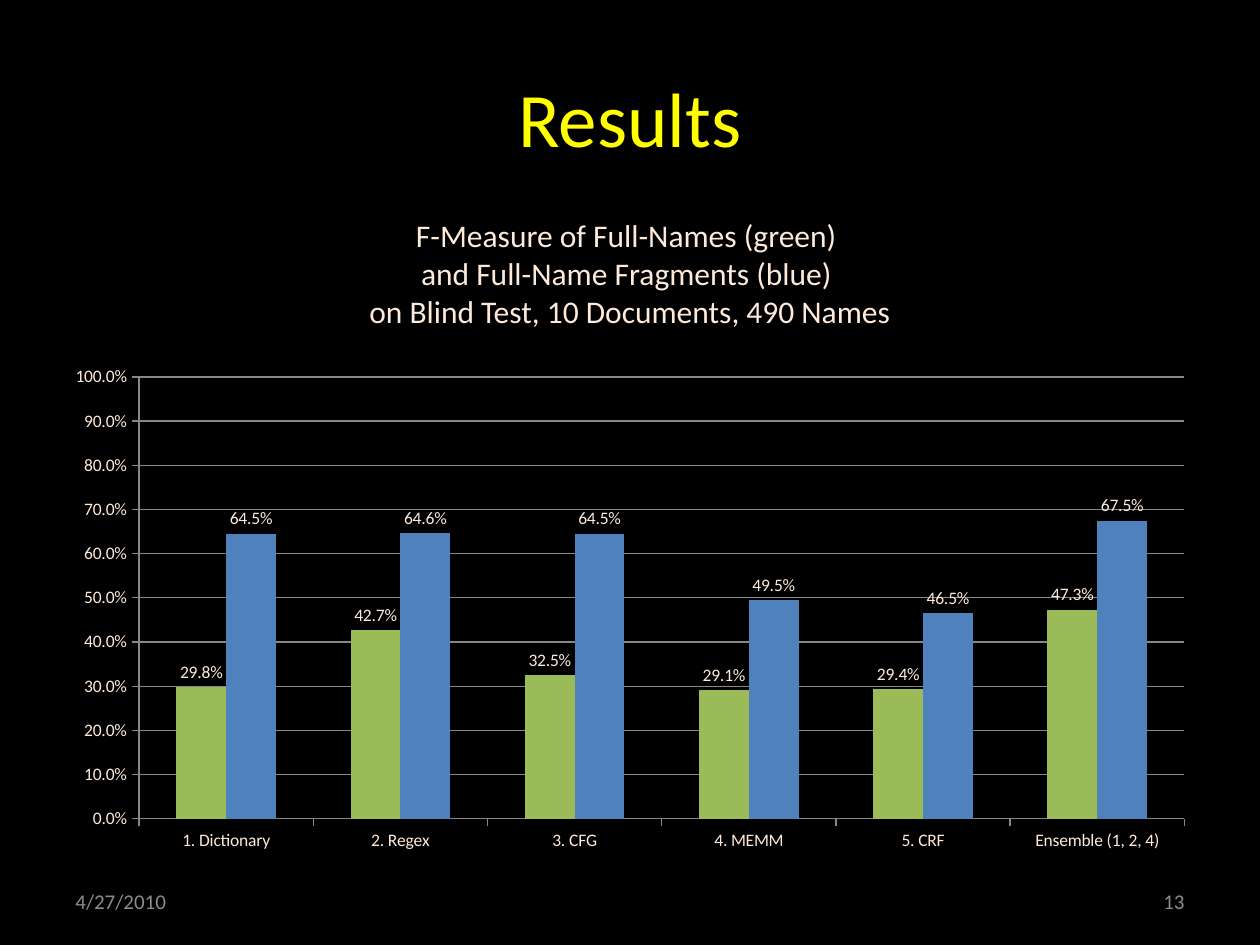
"""Build the results slide: a title, a caption and a clustered column chart."""
from dataclasses import dataclass

from pptx import Presentation
from pptx import util as u
from pptx.chart.data import CategoryChartData
from pptx.dml.color import RGBColor
from pptx.enum import chart as ch
from pptx.enum import text as t


@dataclass(frozen=True)
class Theme:
    font: str = "Calibri"
    back: str = "000000"
    head: str = "FFFF00"
    body: str = "FDEADA"
    mute: str = "8C8C8C"
    line: str = "878787"
    bars: tuple = ("9BBB59", "4F81BD")
    big: int = 44
    mid: int = 18
    small: int = 12
    tiny: int = 10


class Deck:
    cols, rows = 120, 90

    def __init__(self, theme):
        self.theme = theme
        self.prs = Presentation()
        self.prs.slide_width, self.prs.slide_height = u.Inches(10), u.Inches(7.5)
        self.slide = self.prs.slides.add_slide(self.prs.slide_layouts[5])
        self.paint(self.slide.background.fill, theme.back)

    def paint(self, fill, color):
        fill.solid()
        fill.fore_color.rgb = RGBColor.from_string(color)

    def box(self, x, y, w, h):
        dx = self.prs.slide_width / self.cols
        dy = self.prs.slide_height / self.rows
        return [round(n) for n in (x * dx, y * dy, w * dx, h * dy)]

    def style(self, font, size, color):
        font.name, font.size = self.theme.font, u.Pt(size)
        font.color.rgb = RGBColor.from_string(color)

    def fill_text(self, shape, lines, size, color, align, anchor):
        frame = shape.text_frame
        frame.word_wrap, frame.vertical_anchor = True, anchor
        for i, line in enumerate(lines):
            para = frame.add_paragraph() if i else frame.paragraphs[0]
            para.alignment = align
            run = para.add_run()
            run.text = line
            self.style(run.font, size, color)

    def title(self, words, area):
        shape = self.slide.shapes.title
        shape.left, shape.top, shape.width, shape.height = self.box(*area)
        self.fill_text(shape, [words], self.theme.big, self.theme.head,
                       t.PP_ALIGN.CENTER, t.MSO_ANCHOR.MIDDLE)

    def text(self, lines, area, size, color, align, anchor=t.MSO_ANCHOR.MIDDLE):
        shape = self.slide.shapes.add_textbox(*self.box(*area))
        self.fill_text(shape, lines, size, color, align, anchor)

    def axis(self, axis):
        axis.major_tick_mark = ch.XL_TICK_MARK.OUTSIDE
        axis.minor_tick_mark = ch.XL_TICK_MARK.NONE
        self.paint(axis.format.line.fill, self.theme.line)

    def chart(self, names, series, area):
        data = CategoryChartData(number_format="0.0%")
        data.categories = names
        for name, vals in series.items():
            data.add_series(name, vals)
        chart = self.slide.shapes.add_chart(
            ch.XL_CHART_TYPE.COLUMN_CLUSTERED, *self.box(*area), data).chart
        chart.has_legend = chart.has_title = False
        self.style(chart.font, self.theme.tiny, self.theme.body)
        self.axis(chart.category_axis)
        axis = chart.value_axis
        self.axis(axis)
        axis.minimum_scale, axis.maximum_scale, axis.major_unit = 0, 1, 0.1
        axis.has_major_gridlines = True
        self.paint(axis.major_gridlines.format.line.fill, self.theme.line)
        axis.tick_labels.number_format = "0.0%"
        axis.tick_labels.number_format_is_linked = False
        plot = chart.plots[0]
        plot.gap_width, plot.overlap, plot.vary_by_categories = 150, 0, False
        for bars, color in zip(plot.series, self.theme.bars):
            self.paint(bars.format.fill, color)
            labels = bars.data_labels
            labels.show_value = True
            labels.number_format = "0.0%"
            labels.number_format_is_linked = False
            labels.position = ch.XL_LABEL_POSITION.OUTSIDE_END


def main():
    theme = Theme()
    deck = Deck(theme)
    deck.title("Results", (6, 3.6, 108, 15))
    deck.text(["13"], (86, 83.4, 28, 4.8), theme.small, theme.mute, t.PP_ALIGN.RIGHT)
    deck.text(["4/27/2010"], (6, 83.4, 28, 4.8), theme.small, theme.mute, t.PP_ALIGN.LEFT)
    deck.text(["F-Measure of Full-Names (green) ",
               "and Full-Name Fragments (blue) ",
               "on Blind Test, 10 Documents, 490 Names"],
              (27.5, 20, 65, 12.1), theme.mid, theme.body,
              t.PP_ALIGN.CENTER, t.MSO_ANCHOR.TOP)
    deck.chart(["1. Dictionary", "2. Regex", "3. CFG", "4. MEMM", "5. CRF",
                "Ensemble (1, 2, 4)"],
               {"Series 1": (0.298, 0.427, 0.325, 0.291, 0.294, 0.473),
                "Series 2": (0.645, 0.646, 0.645, 0.495, 0.465, 0.675)},
               (5, 34, 110, 48))
    deck.prs.save("out.pptx")


if __name__ == "__main__":
    main()
